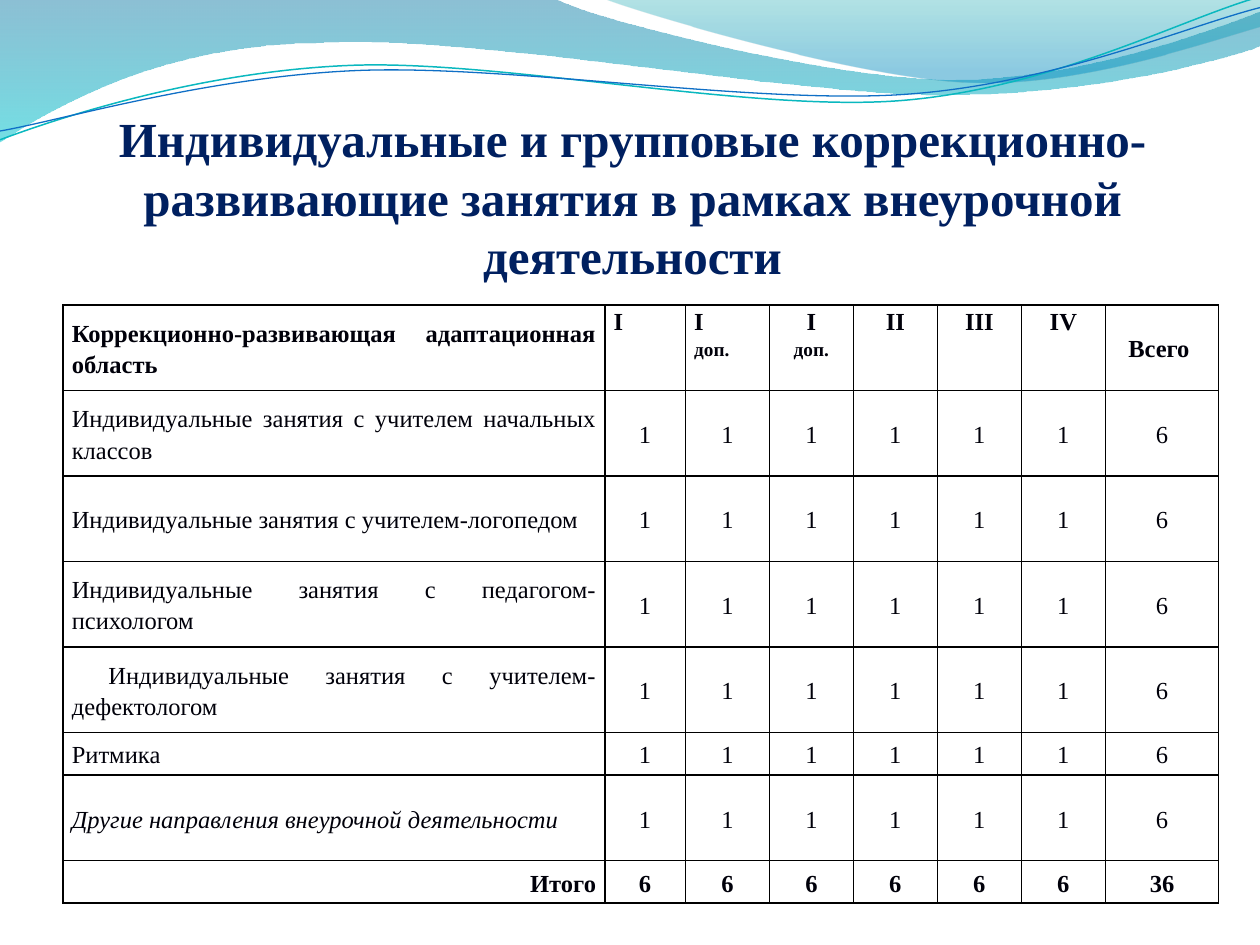
from math import cos, radians, sin

from lxml import etree
from pptx import Presentation
from pptx.dml.color import RGBColor
from pptx.enum.text import MSO_ANCHOR, PP_ALIGN
from pptx.oxml.ns import qn
from pptx.util import Inches, Pt

LEFT, CENTER, RIGHT, JUSTIFY = PP_ALIGN.LEFT, PP_ALIGN.CENTER, PP_ALIGN.RIGHT, PP_ALIGN.JUSTIFY
TOP, MIDDLE, BOTTOM = MSO_ANCHOR.TOP, MSO_ANCHOR.MIDDLE, MSO_ANCHOR.BOTTOM

COLORS = {
    "title": "002060", "text": "00000A", "border": "000000",
    "deep": "0074A1", "aqua": "00C6CF", "teal": "00A1A9", "azure": "008BBF",
    "line_teal": "0AB8BF", "line_blue": "0F6FC6",
}
TITLE = ("Индивидуальные и групповые коррекционно-развивающие занятия "
         "в рамках внеурочной деятельности")

# Each wave is a start point followed by segments: 2 numbers for a line, 6 for a Bezier curve.
BAND = [(0, -0.01), (4.4, -0.01), (4.76, 0.17, 6.64, 0.63, 7.58, 0.63),
        (8.53, 0.63, 9.58, 0.26, 10, 0.09), (10.01, 0.36),
        (9.83, 0.44, 8.7, 0.76, 7.46, 0.75), (6.22, 0.75, 3.82, 0.28, 2.57, 0.34),
        (1.29, 0.35, 0.46, 0.83, -0.01, 1.13), (0, -0.01)]
CREST = [(4.79, -0.01), (5.09, 0.11, 6.82, 0.62, 7.69, 0.65),
         (8.56, 0.69, 9.61, 0.32, 10, 0.21), (10, 0), (4.79, -0.01)]
TEAL_LINE = [(0, 1.11), (0.48, 0.93, 1.58, 0.57, 2.77, 0.52),
             (3.95, 0.47, 5.93, 0.89, 7.13, 0.8), (8.33, 0.71, 9.38, 0.15, 9.98, -0.02)]
BLUE_LINE = [(0, 1.04), (0.47, 0.96, 1.64, 0.61, 2.83, 0.56),
             (4.03, 0.51, 5.97, 0.83, 7.17, 0.75), (8.36, 0.67, 9.41, 0.21, 10, 0.06)]
LINE_ROTATION = 357.3

COL_WIDTHS = [4.3, 0.64] + [2 / 3] * 5 + [0.9]
TALL = 4.75 / 7
SHORT = TALL / 2
HEADERS = [  # text, alignment, anchor
    ("Коррекционно-развивающая адаптационная область", JUSTIFY, MIDDLE),
    ("I", LEFT, TOP), ("I\nдоп.", LEFT, TOP), ("I\nдоп.", CENTER, TOP),
    ("II", CENTER, TOP), ("III", CENTER, TOP), ("IV", CENTER, TOP),
    ("Всего ", CENTER, MIDDLE),
]
LESSONS = [  # name, row height, format
    ("Индивидуальные занятия с учителем начальных классов", TALL, {}),
    ("Индивидуальные занятия с учителем-логопедом", TALL, {}),
    ("Индивидуальные занятия с педагогом-психологом", TALL, {}),
    ("Индивидуальные занятия с учителем-дефектологом", TALL, {"indent": 0.29}),
    ("Ритмика", SHORT, {}),
    ("Другие направления внеурочной деятельности", TALL, {"italic": True}),
]
CLASSES = 6


def rgb(name):
    return RGBColor.from_string(COLORS[name])


class SlideBuilder:
    font = "Times New Roman"
    size = 14
    small = 11

    def __init__(self, s):
        self.s = s

    def freeform(self, segments, box, close=False, rotation=0):
        """Draw lines and curves, given as they lie on the slide, in a box turned by rotation."""
        x, y, w, h = box
        fb = self.s.shapes.build_freeform(Inches(x), Inches(y))
        fb.add_line_segments([(Inches(x + w), Inches(y + h))], close=False)
        sp = fb.convert_to_shape()
        sp.shadow.inherit = False
        sp.rotation = rotation
        outline = next(sp._element.iter(qn("a:path")))
        for child in list(outline):
            outline.remove(child)
        turn = radians(-rotation)
        for i, seg in enumerate(segments):
            tag = "a:cubicBezTo" if len(seg) == 6 else "a:lnTo" if i else "a:moveTo"
            node = etree.SubElement(outline, qn(tag))
            for px, py in zip(seg[::2], seg[1::2]):
                dx, dy = px - x - w / 2, py - y - h / 2
                local_x = w / 2 + dx * cos(turn) - dy * sin(turn)
                local_y = h / 2 + dx * sin(turn) + dy * cos(turn)
                etree.SubElement(node, qn("a:pt"), x=str(Inches(local_x)), y=str(Inches(local_y)))
        if close:
            etree.SubElement(outline, qn("a:close"))
        return sp

    def wave(self, segments, box, stops):
        """Fill a closed outline top to bottom; a stop is (percent, colour, opacity percent)."""
        sp = self.freeform(segments, box, close=True)
        sp.line.fill.background()
        sp.fill.gradient()
        sp.fill.gradient_angle = 270
        for stop, (_, color, _) in zip(sp.fill.gradient_stops, stops):
            stop.color.rgb = rgb(color)
        for gs, (pos, _, opacity) in zip(sp._element.spPr.iter(qn("a:gs")), stops):
            gs.set("pos", str(pos * 1000))
            etree.SubElement(gs[0], qn("a:alpha")).set("val", str(opacity * 1000))

    def curve(self, segments, box, color, width):
        sp = self.freeform(segments, box, rotation=LINE_ROTATION)
        sp.fill.background()
        sp.line.color.rgb = rgb(color)
        sp.line.width = Pt(width)

    def run(self, p, text, color, size, **fmt):
        r = p.add_run()
        r.text = text
        for key, value in {"name": self.font, "size": Pt(size), **fmt}.items():
            setattr(r.font, key, value)
        r.font.color.rgb = rgb(color)

    def title(self, text):
        tf = self.s.shapes.add_textbox(Inches(0.02), Inches(0.5), Inches(10), Inches(2.23)).text_frame
        fmt = {"word_wrap": True, "vertical_anchor": BOTTOM, "margin_left": 0,
               "margin_right": 0, "margin_top": Inches(0.05), "margin_bottom": Inches(0.47)}
        for key, value in fmt.items():
            setattr(tf, key, value)
        p = tf.paragraphs[0]
        p.alignment = CENTER
        self.run(p, text, "title", 28, bold=True)

    def table(self, x, y, widths, heights):
        frame = self.s.shapes.add_table(len(heights), len(widths), Inches(x), Inches(y),
                                        Inches(sum(widths)), Inches(sum(heights)))
        table = frame.table
        table.first_row = table.horz_banding = False
        for col, width in zip(table.columns, widths):
            col.width = Inches(width)
        for row, height in zip(table.rows, heights):
            row.height = Inches(height)
        return table

    def borders(self, cell):
        tc_pr = cell._tc.get_or_add_tcPr()
        for side in ("a:lnL", "a:lnR", "a:lnT", "a:lnB"):
            ln = etree.SubElement(tc_pr, qn(side), w=str(Pt(1)))
            fill = etree.SubElement(ln, qn("a:solidFill"))
            etree.SubElement(fill, qn("a:srgbClr"), val=COLORS["border"])

    def cell(self, cell, text, align=CENTER, anchor=MIDDLE, indent=0, **fmt):
        """Fill one cell; lines after the first are set small."""
        self.borders(cell)
        cell.fill.background()
        layout = {"vertical_anchor": anchor, "margin_left": Inches(0.07),
                  "margin_right": Inches(0.07), "margin_top": 0, "margin_bottom": 0}
        for key, value in layout.items():
            setattr(cell, key, value)
        tf = cell.text_frame
        for i, line in enumerate(text.split("\n")):
            p = tf.add_paragraph() if i else tf.paragraphs[0]
            p.alignment = align
            p.line_spacing = 1.15
            if indent:
                p._p.get_or_add_pPr().set("indent", str(Inches(indent)))
            self.run(p, line, "text", self.small if i else self.size, **fmt)


def main():
    prs = Presentation()
    prs.slide_width, prs.slide_height = Inches(10), Inches(7.5)
    b = SlideBuilder(prs.slides.add_slide(prs.slide_layouts[6]))

    b.wave(BAND, (-0.01, -0.01, 10.02, 1.14), [(0, "deep", 45), (100, "aqua", 55)])
    b.wave(CREST, (4.79, -0.01, 5.21, 0.7), [(0, "teal", 30), (80, "azure", 45)])
    b.curve(TEAL_LINE, (-0.02, 0.22, 10.02, 0.71), "line_teal", 0.85)
    b.curve(BLUE_LINE, (-0.02, 0.3, 10.03, 0.58), "line_blue", 0.75)
    b.title(TITLE)

    heights = [TALL] + [height for _, height, _ in LESSONS] + [SHORT]
    table = b.table(0.5, 2.42, COL_WIDTHS, heights)
    for col, (text, align, anchor) in enumerate(HEADERS):
        b.cell(table.cell(0, col), text, align, anchor, bold=True)
    for row, (name, _, fmt) in enumerate(LESSONS, 1):
        b.cell(table.cell(row, 0), name, JUSTIFY, **fmt)
        for col, hours in enumerate([1] * CLASSES + [CLASSES], 1):
            b.cell(table.cell(row, col), str(hours))
    last = len(heights) - 1
    b.cell(table.cell(last, 0), "Итого", RIGHT, bold=True)
    for col, hours in enumerate([len(LESSONS)] * CLASSES + [len(LESSONS) * CLASSES], 1):
        b.cell(table.cell(last, col), str(hours), bold=True)

    prs.save("out.pptx")


if __name__ == "__main__":
    main()
